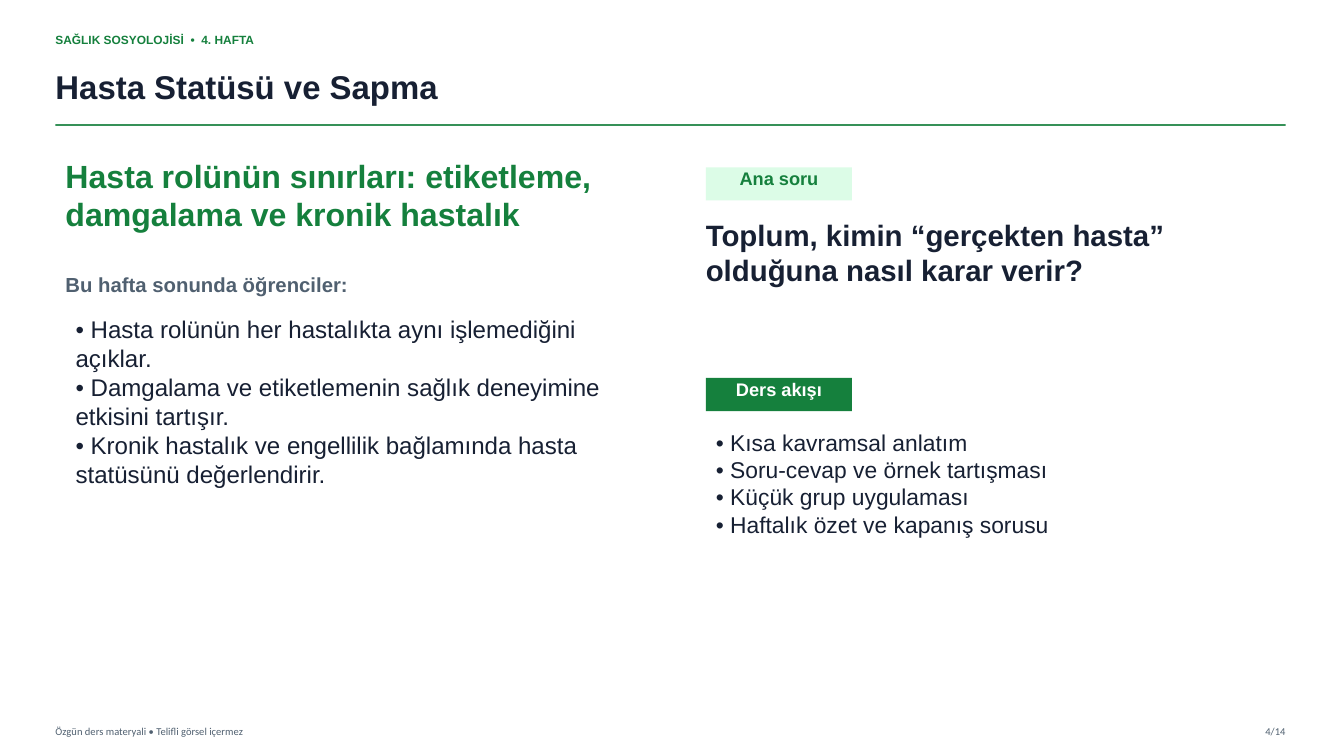
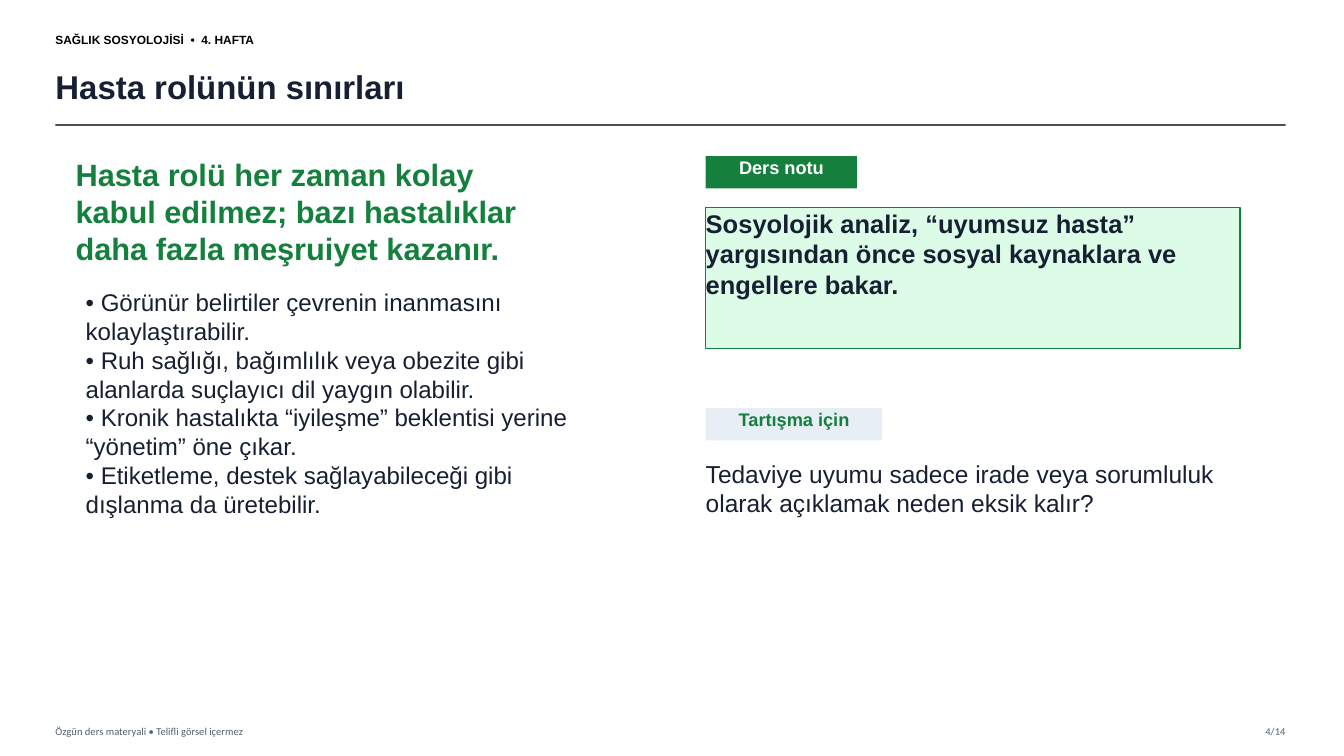
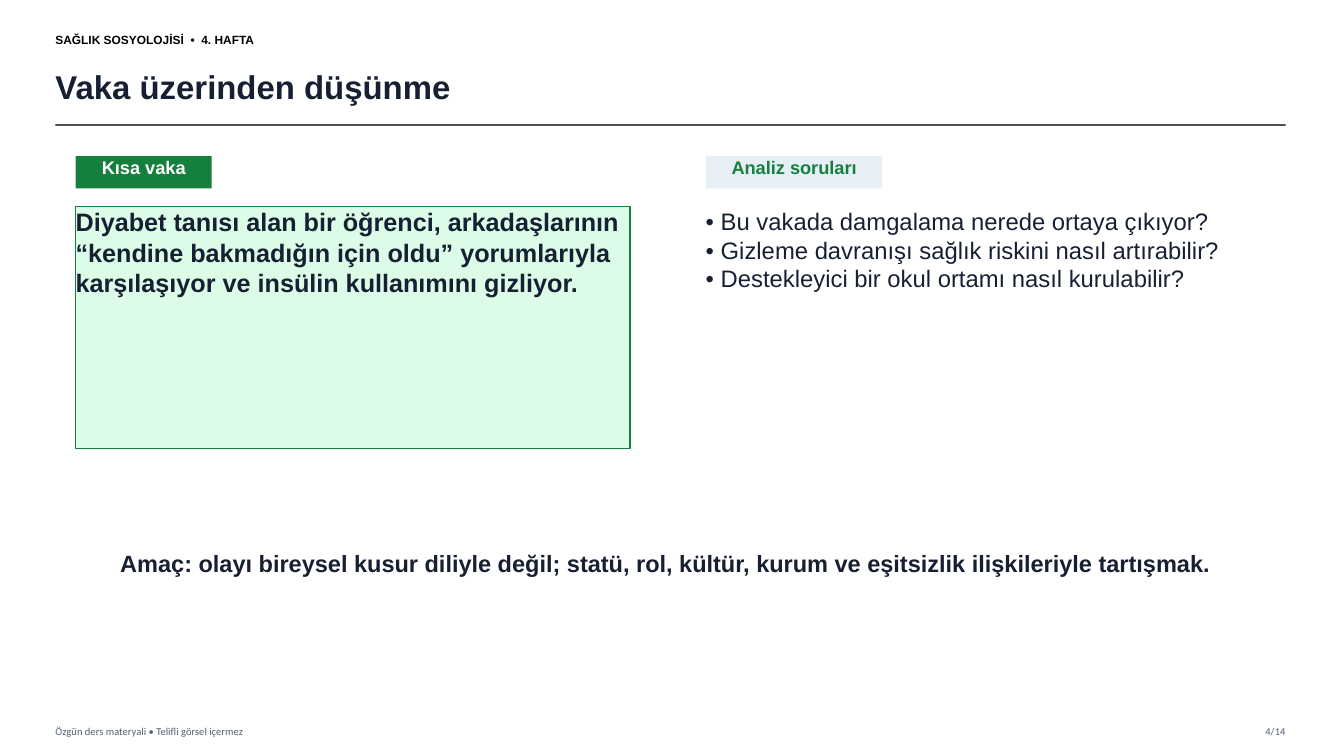
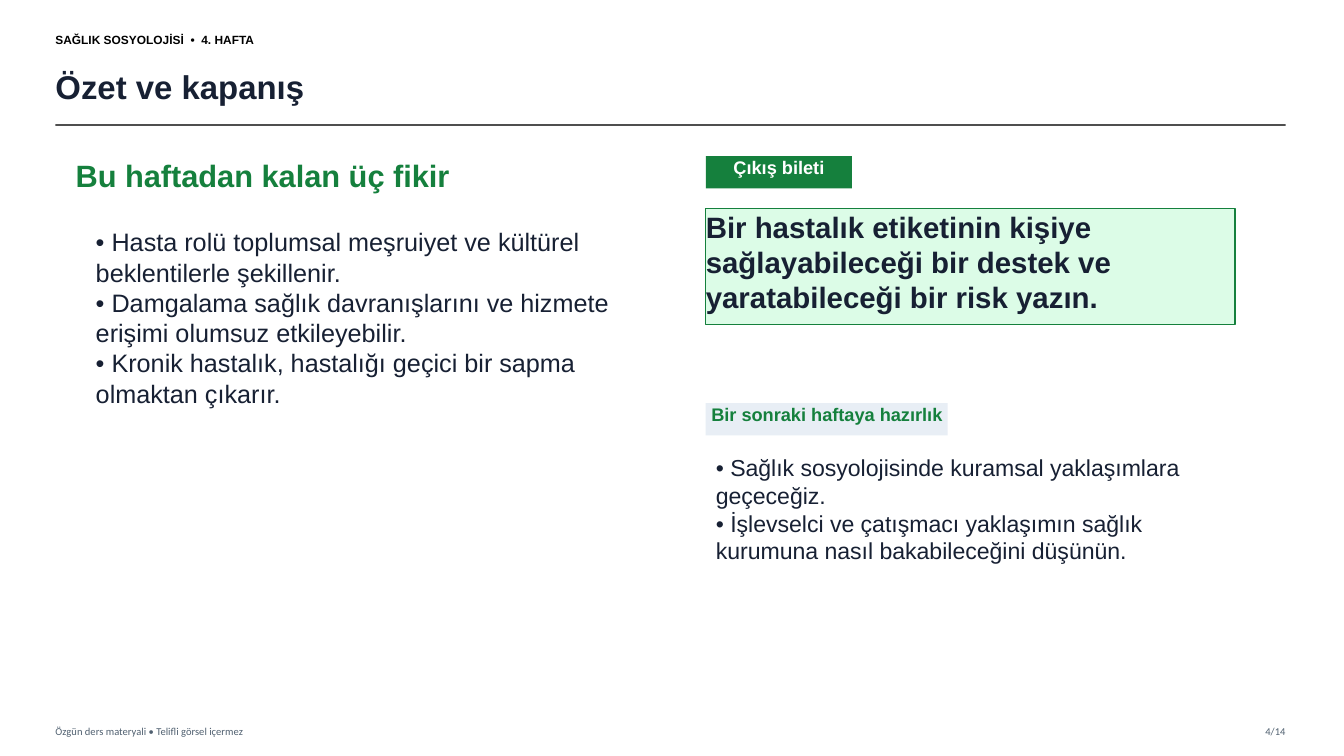
from dataclasses import dataclass, replace

from lxml.etree import SubElement
from pptx import Presentation
from pptx.dml.color import RGBColor
from pptx.enum.shapes import MSO_CONNECTOR, MSO_SHAPE
from pptx.enum.text import MSO_ANCHOR as Anchor, PP_ALIGN as Align
from pptx.oxml.ns import qn
from pptx.util import Emu, Pt

PX = 9144  # one hundred px to the inch


@dataclass(frozen=True)
class Style:
    size: float
    color: str
    bold: bool = False
    font: str = "Arial"
    align: Align = Align.LEFT
    anchor: Anchor = Anchor.TOP
    fill: str = ""
    outline: str = ""


class Theme:
    green, mint, mist = "15803D", "DCFCE7", "E8EEF5"
    ink, slate, black, graphite, white = "172033", "506070", "000000", "333333", "FFFFFF"

    course = Style(8.5, black, bold=True, anchor=Anchor.MIDDLE)
    course_green = replace(course, color=green)
    title = Style(23.5, ink, bold=True, anchor=Anchor.MIDDLE)
    footer = Style(7.5, slate, font="Calibri", anchor=Anchor.MIDDLE)
    number = replace(footer, align=Align.RIGHT)

    heading = Style(22, green, bold=True)
    topic = replace(heading, size=22.9)
    intro = Style(14.5, slate, bold=True)
    question = Style(21, ink, bold=True)
    purpose = Style(16.8, ink, bold=True, align=Align.CENTER)

    points = Style(17.2, ink)
    agenda = replace(points, size=16.3)
    prompt = replace(points, size=17.5)
    analysis = replace(points, size=17)
    summary = replace(points, size=18)
    homework = replace(points, size=16.5)

    tag_green = Style(13, white, bold=True, align=Align.CENTER, fill=green)
    tag_mint = replace(tag_green, color=green, fill=mint)
    tag_mist = replace(tag_mint, fill=mist)

    ticket = replace(question, fill=mint, outline=green)
    note = replace(ticket, size=18.2)
    case = replace(ticket, size=18)


def add_text(page, style, at, *lines):
    """Add a text box, or a filled rectangle when the style has a fill."""
    place = [Emu(value * PX) for value in at]
    if style.fill:
        box = page.shapes.add_shape(MSO_SHAPE.RECTANGLE, *place)
        box.shadow.inherit = False
        box.fill.solid()
        box.fill.fore_color.rgb = RGBColor.from_string(style.fill)
        if style.outline:
            box.line.color.rgb = RGBColor.from_string(style.outline)
            box.line.width = Pt(1)
        else:
            box.line.fill.background()
    else:
        box = page.shapes.add_textbox(*place)
    frame = box.text_frame
    frame.word_wrap = True
    frame.vertical_anchor = style.anchor
    frame.margin_left = frame.margin_top = frame.margin_right = frame.margin_bottom = 0
    for index, line in enumerate(lines):
        para = frame.add_paragraph() if index else frame.paragraphs[0]
        para.alignment = style.align
        span = para.add_run()
        span.text = line
        span.font.name = style.font
        span.font.size = Pt(style.size)
        span.font.bold = style.bold
        span.font.color.rgb = RGBColor.from_string(style.color)


def add_rule(page, color):
    left, right, level = (Emu(value * PX) for value in (MARGIN, EDGE, 124))
    rule = page.shapes.add_connector(MSO_CONNECTOR.STRAIGHT, left, level, right, level)
    rule.line.width = Pt(1.2)
    rule.line.color.rgb = RGBColor.from_string(color)
    tint = next(rule.line._get_or_add_ln().iter(qn("a:srgbClr")))
    SubElement(tint, qn("a:alpha"), val="85000")
    SubElement(rule._element.spPr, qn("a:effectLst"))


MARGIN, EDGE = 55, 1275
LEFT, RIGHT, TOP = 75, 700, 155
TAG = 32

# Title, course line style, rule colour, then blocks of style, place and lines
PAGES = [
    ("Hasta Statüsü ve Sapma", Theme.course_green, Theme.green, [
        (Theme.topic, (65, TOP, 530, 86),
         "Hasta rolünün sınırları: etiketleme, damgalama ve kronik hastalık"),
        (Theme.intro, (65, 270, 490, 30), "Bu hafta sonunda öğrenciler:"),
        (Theme.points, (LEFT, 312, 550, 200),
         "• Hasta rolünün her hastalıkta aynı işlemediğini açıklar.",
         "• Damgalama ve etiketlemenin sağlık deneyimine etkisini tartışır.",
         "• Kronik hastalık ve engellilik bağlamında hasta statüsünü değerlendirir."),
        (Theme.tag_mint, (RIGHT, 166, 145, 33), "Ana soru"),
        (Theme.question, (RIGHT, 215, 535, 110),
         "Toplum, kimin “gerçekten hasta” olduğuna nasıl karar verir?"),
        (Theme.tag_green, (RIGHT, 375, 145, 33), "Ders akışı"),
        (Theme.agenda, (RIGHT + 10, 425, 535, 155),
         "• Kısa kavramsal anlatım",
         "• Soru-cevap ve örnek tartışması",
         "• Küçük grup uygulaması",
         "• Haftalık özet ve kapanış sorusu"),
    ]),
    ("Hasta rolünün sınırları", Theme.course, Theme.graphite, [
        (Theme.heading, (LEFT, TOP, 460, 100),
         "Hasta rolü her zaman kolay kabul edilmez; bazı hastalıklar daha fazla "
         "meşruiyet kazanır."),
        (Theme.points, (LEFT + 10, 285, 525, 270),
         "• Görünür belirtiler çevrenin inanmasını kolaylaştırabilir.",
         "• Ruh sağlığı, bağımlılık veya obezite gibi alanlarda suçlayıcı dil yaygın olabilir.",
         "• Kronik hastalıkta “iyileşme” beklentisi yerine “yönetim” öne çıkar.",
         "• Etiketleme, destek sağlayabileceği gibi dışlanma da üretebilir."),
        (Theme.tag_green, (RIGHT, TOP, 150, TAG), "Ders notu"),
        (Theme.note, (RIGHT, 206, 530, 140),
         "Sosyolojik analiz, “uyumsuz hasta” yargısından önce sosyal kaynaklara ve "
         "engellere bakar."),
        (Theme.tag_mist, (RIGHT, 405, 175, TAG), "Tartışma için"),
        (Theme.prompt, (RIGHT, 455, 530, 125),
         "Tedaviye uyumu sadece irade veya sorumluluk olarak açıklamak neden eksik kalır?"),
    ]),
    ("Vaka üzerinden düşünme", Theme.course, Theme.graphite, [
        (Theme.tag_green, (LEFT, TOP, 135, TAG), "Kısa vaka"),
        (Theme.case, (LEFT, 205, 550, 240),
         "Diyabet tanısı alan bir öğrenci, arkadaşlarının “kendine bakmadığın için oldu” "
         "yorumlarıyla karşılaşıyor ve insülin kullanımını gizliyor."),
        (Theme.tag_mist, (RIGHT, TOP, 175, TAG), "Analiz soruları"),
        (Theme.analysis, (RIGHT, 205, 540, 265),
         "• Bu vakada damgalama nerede ortaya çıkıyor?",
         "• Gizleme davranışı sağlık riskini nasıl artırabilir?",
         "• Destekleyici bir okul ortamı nasıl kurulabilir?"),
        (Theme.purpose, (105, 545, 1110, 60),
         "Amaç: olayı bireysel kusur diliyle değil; statü, rol, kültür, kurum ve "
         "eşitsizlik ilişkileriyle tartışmak."),
    ]),
    ("Özet ve kapanış", Theme.course, Theme.graphite, [
        (Theme.heading, (LEFT, TOP, 540, 45), "Bu haftadan kalan üç fikir"),
        (Theme.summary, (LEFT + 20, 225, 550, 240),
         "• Hasta rolü toplumsal meşruiyet ve kültürel beklentilerle şekillenir.",
         "• Damgalama sağlık davranışlarını ve hizmete erişimi olumsuz etkileyebilir.",
         "• Kronik hastalık, hastalığı geçici bir sapma olmaktan çıkarır."),
        (Theme.tag_green, (RIGHT, TOP, 145, TAG), "Çıkış bileti"),
        (Theme.ticket, (RIGHT, 207, 525, 115),
         "Bir hastalık etiketinin kişiye sağlayabileceği bir destek ve yaratabileceği "
         "bir risk yazın."),
        (Theme.tag_mist, (RIGHT, 400, 240, TAG), "Bir sonraki haftaya hazırlık"),
        (Theme.homework, (RIGHT + 10, 450, 520, 135),
         "• Sağlık sosyolojisinde kuramsal yaklaşımlara geçeceğiz.",
         "• İşlevselci ve çatışmacı yaklaşımın sağlık kurumuna nasıl bakabileceğini düşünün."),
    ]),
]

deck = Presentation()
deck.slide_width, deck.slide_height = Emu(1333 * PX), Emu(750 * PX)

for title, course_style, rule_color, blocks in PAGES:
    page = deck.slides.add_slide(deck.slide_layouts[6])
    add_text(page, course_style, (MARGIN, 25, 360, 28), "SAĞLIK SOSYOLOJİSİ  •  4. HAFTA")
    add_text(page, Theme.title, (MARGIN, 58, 1195, 55), title)
    add_rule(page, rule_color)
    add_text(page, Theme.footer, (MARGIN, 714, 600, 22),
             "Özgün ders materyali • Telifli görsel içermez")
    add_text(page, Theme.number, (EDGE - 65, 714, 65, 22), "4/14")
    for style, at, *lines in blocks:
        add_text(page, style, at, *lines)

deck.save("out.pptx")
